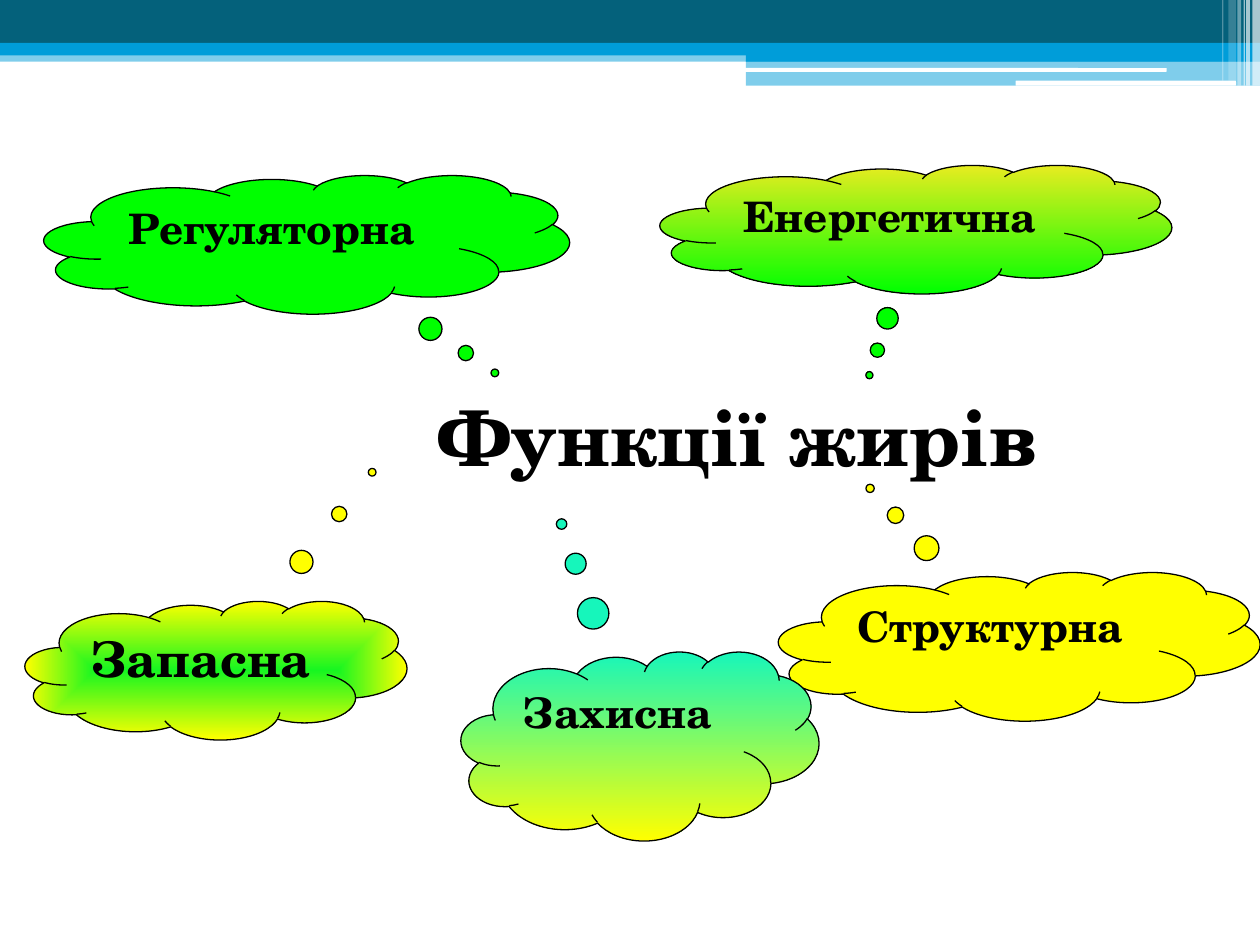
from dataclasses import dataclass

from lxml.etree import SubElement
from pptx import Presentation
from pptx.dml.color import RGBColor
from pptx.enum.shapes import MSO_SHAPE
from pptx.enum.text import MSO_ANCHOR, PP_ALIGN
from pptx.oxml.ns import qn
from pptx.util import Inches, Pt


@dataclass(frozen=True)
class Theme:
    """Colours, font and type sizes of the slide."""
    font: str = "TeX Gyre Schola"
    title: int = 44
    label: int = 24
    large_label: int = 28
    outline: float = 0.75
    ink: str = "000000"
    white: str = "FFFFFF"
    navy: str = "04617B"
    blue: str = "009DD9"
    green: str = "00FF00"
    leaf: str = "16F621"
    yellow: str = "FFFF00"
    olive: str = "E7EC20"
    aqua: str = "16F6BB"


THEME = Theme()


def set_all(target, values):
    """Set each named attribute of the target."""
    for name, value in values.items():
        setattr(target, name, value)


def write(tf, text, size):
    """Write one bold, left-aligned line at the top of a text frame."""
    set_all(tf, {"word_wrap": True, "vertical_anchor": MSO_ANCHOR.TOP})
    p = tf.paragraphs[0]
    p.alignment = PP_ALIGN.LEFT
    r = p.add_run()
    r.text = text
    set_all(r.font, {"name": THEME.font, "size": Pt(size), "bold": True})
    r.font.color.rgb = RGBColor.from_string(THEME.ink)


def add_preset(slide, kind, box, adjustments=()):
    """Add a shadowless preset shape in a box given in inches."""
    sp = slide.shapes.add_shape(kind, *map(Inches, box))
    sp.shadow.inherit = False
    for i, value in enumerate(adjustments):
        sp.adjustments[i] = value
    return sp


def fill_solid(sp, color, opacity=100):
    """Fill a shape with one colour at an opacity in percent."""
    sp.fill.solid()
    sp.fill.fore_color.rgb = RGBColor.from_string(color)
    if opacity < 100:
        clr = sp.fill._xPr.find(qn("a:solidFill"))[0]
        SubElement(clr, qn("a:alpha"), val=str(opacity * 1000))


def fill_gradient(sp, colors, from_center=False):
    """Fill a shape from top to bottom, or outwards from its centre."""
    sp.fill.gradient()
    sp.fill.gradient_angle = 270
    for stop, color in zip(sp.fill.gradient_stops, colors):
        stop.color.rgb = RGBColor.from_string(color)
    if from_center:
        grad = sp.fill._xPr.find(qn("a:gradFill"))
        grad.remove(grad.find(qn("a:lin")))
        shade = SubElement(grad, qn("a:path"), {"path": "rect"})
        SubElement(shade, qn("a:fillToRect"), dict.fromkeys("ltrb", "50000"))


def add_header(slide, left, top, width):
    """Draw the banded header, with white lines and stripes at its right end."""
    t = THEME
    right = left + width
    bands = [
        (0, 0.4, width, 0.09, t.blue, 50),
        (0, 0, width, 0.34, t.navy, 100),
        (0, 0.34, width, 0.1, t.blue, 100),
        (5.92, 0.39, width - 5.92, 0.1, t.blue, 100),
        (5.92, 0.48, width - 5.92, 0.2, t.blue, 50),
    ]
    for x, y, w, h, color, opacity in bands:
        sp = add_preset(slide, MSO_SHAPE.RECTANGLE, (left + x, top + y, w, h))
        fill_solid(sp, color, opacity)
        sp.line.fill.background()
    for x, y, w, h in [(5.91, 0.54, 3.35, 0.03), (8.06, 0.64, 1.75, 0.04)]:
        box = (left + x, top + y, w, h)
        sp = add_preset(slide, MSO_SHAPE.ROUNDED_RECTANGLE, box, [0.167])
        fill_solid(sp, t.white)
        sp.line.fill.background()
    stripes = [
        (0.06, 0.06, 0.68, 65), (0.11, 0.03, 0.68, 65), (0.13, 0.01, 0.68, 60),
        (0.18, 0.03, 0.68, 40), (0.25, 0.06, 0.64, 20), (0.3, 0.01, 0.64, 30),
    ]
    for inset, w, h, opacity in stripes:
        sp = add_preset(slide, MSO_SHAPE.RECTANGLE, (right - inset, top, w, h))
        fill_solid(sp, t.white, opacity)
        sp.line.fill.background()


def add_title(slide, left, top, width, height, indent):
    """Place the title, its text indented from the left of its box."""
    title = slide.shapes.title
    names = ("left", "top", "width", "height")
    set_all(title, dict(zip(names, map(Inches, (left, top, width, height)))))
    title.text_frame.margin_left = Inches(indent)
    write(title.text_frame, "Функції жирів", THEME.title)


def add_cloud(slide, box, tail, text, colors, size=THEME.label, from_center=False):
    """Draw a labelled thought cloud whose bubbles lead to the tail point."""
    sp = add_preset(slide, MSO_SHAPE.CLOUD_CALLOUT, box, tail)
    if len(colors) == 1:
        fill_solid(sp, colors[0])
    else:
        fill_gradient(sp, colors, from_center)
    sp.line.width = Pt(THEME.outline)
    sp.line.color.rgb = RGBColor.from_string(THEME.ink)
    write(sp.text_frame, text, size)


def main():
    """Build the slide and save it."""
    t = THEME
    prs = Presentation()
    set_all(prs, {"slide_width": Inches(10), "slide_height": Inches(7.5)})
    slide = prs.slides.add_slide(prs.slide_layouts[5])
    add_header(slide, 0, 0, 10)
    add_title(slide, 0.43, 3.04, 9.13, 0.83, indent=3.05)
    add_cloud(slide, (5.24, 1.31, 4.06, 1.02), (-0.091, 1.135),
              "Енергетична", (t.olive, t.green))
    add_cloud(slide, (6.18, 4.54, 3.82, 1.18), (-0.31, -1.063),
              "Структурна", (t.yellow,))
    add_cloud(slide, (0.35, 1.39, 4.17, 1.1), (0.358, 0.927),
              "Регуляторна", (t.green,))
    add_cloud(slide, (0.2, 4.77, 3.03, 1.1), (0.409, -1.429),
              "Запасна", (t.leaf, t.yellow), t.large_label, from_center=True)
    add_cloud(slide, (3.66, 5.17, 2.84, 1.5), (-0.219, -1.174),
              "Захисна", (t.aqua, t.yellow))
    prs.save("out.pptx")


if __name__ == "__main__":
    main()
